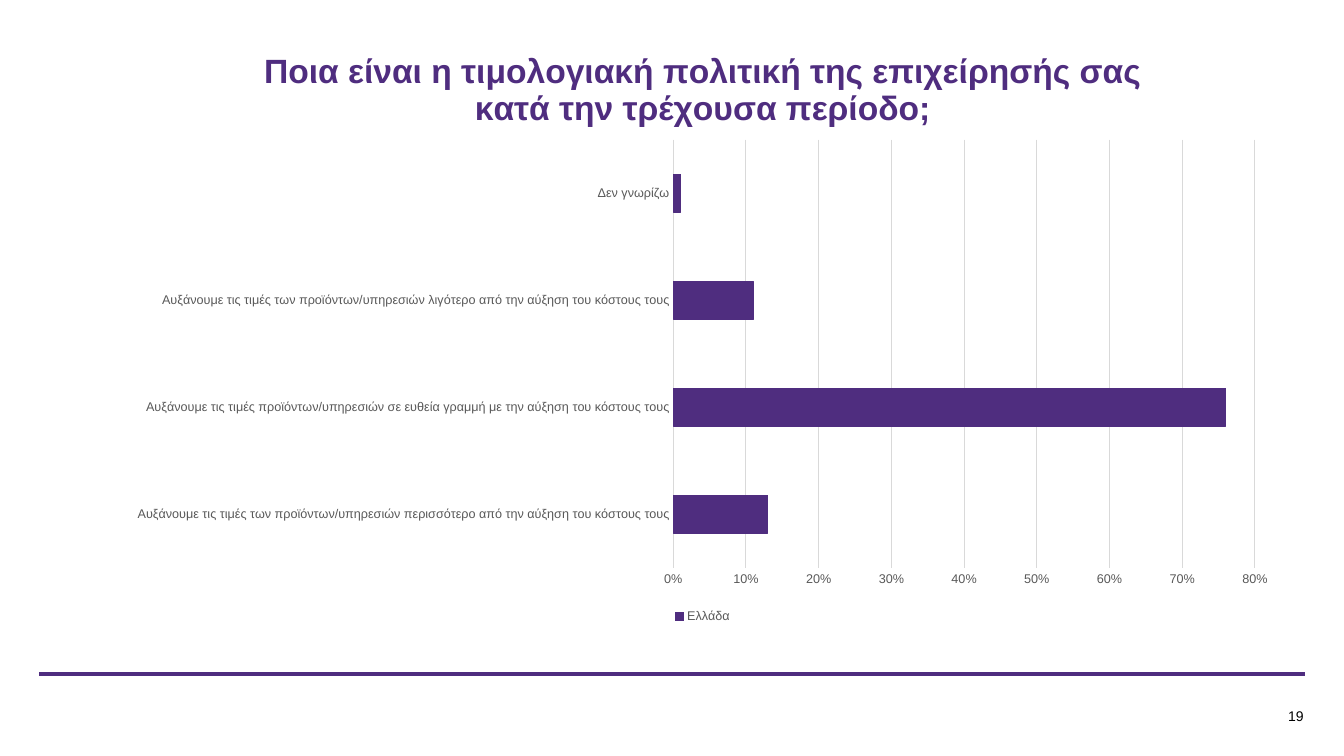
import pptx
import pptx.chart.data
import pptx.dml.color
import pptx.enum.chart
import pptx.enum.shapes
import pptx.enum.text
import pptx.oxml
import pptx.oxml.ns
import pptx.util
from pptx.util import Inches

COLORS = {"purple": "4F2D7F", "label": "595959", "grid": "D9D9D9", "black": "000000"}
FONT = "Arial"
TITLE = "Ποια είναι η τιμολογιακή πολιτική της επιχείρησής σας κατά την τρέχουσα περίοδο;"
ANSWERS = {
    "Αυξάνουμε τις τιμές των προϊόντων/υπηρεσιών περισσότερο από την αύξηση του κόστους τους": 0.13,
    "Αυξάνουμε τις τιμές προϊόντων/υπηρεσιών σε ευθεία γραμμή με την αύξηση του κόστους τους": 0.76,
    "Αυξάνουμε τις τιμές των προϊόντων/υπηρεσιών λιγότερο από την αύξηση του κόστους τους": 0.11,
    "Δεν γνωρίζω": 0.01,
}
PLOT_AREA = {"x": 0.475, "y": 0.19, "w": 0.494, "h": 0.71}


def rgb(name):
    return pptx.dml.color.RGBColor.from_string(COLORS[name])


def style_font(font, size, color, bold=False):
    font.name = FONT
    font.size = pptx.util.Pt(size)
    font.bold = bold
    font.color.rgb = rgb(color)


def style_line(line, color, width):
    line.color.rgb = rgb(color)
    line.width = pptx.util.Pt(width)


def add_rule(slide, left, right, y):
    rule = slide.shapes.add_connector(
        pptx.enum.shapes.MSO_CONNECTOR.STRAIGHT,
        Inches(left), Inches(y), Inches(right), Inches(y))
    style_line(rule.line, "purple", 3)
    rule._element.spPr.append(pptx.oxml.parse_xml(
        "<a:effectLst %s/>" % pptx.oxml.ns.nsdecls("a")))


def add_page_number(slide, number):
    box = slide.shapes.add_textbox(Inches(11.87), Inches(6.99), Inches(1.06), Inches(0.22))
    frame = box.text_frame
    frame.word_wrap = True
    frame.margin_left = frame.margin_right = frame.margin_top = frame.margin_bottom = 0
    frame.vertical_anchor = pptx.enum.text.MSO_ANCHOR.MIDDLE
    paragraph = frame.paragraphs[0]
    paragraph.alignment = pptx.enum.text.PP_ALIGN.RIGHT
    run = paragraph.add_run()
    run.text = number
    style_font(run.font, 10, "black")


def place_plot(chart):
    """Fix the inner plot area as fractions of the chart."""
    sizes = "".join('<c:%s val="%s"/>' % item for item in PLOT_AREA.items())
    layout = pptx.oxml.parse_xml(
        '<c:layout %s><c:manualLayout><c:layoutTarget val="inner"/>'
        '<c:xMode val="edge"/><c:yMode val="edge"/>%s</c:manualLayout></c:layout>'
        % (pptx.oxml.ns.nsdecls("c"), sizes))
    plot_area = chart._chartSpace.chart.plotArea
    for automatic in plot_area.findall(pptx.oxml.ns.qn("c:layout")):
        plot_area.remove(automatic)
    plot_area.insert(0, layout)


def style_axis(axis):
    axis.major_tick_mark = axis.minor_tick_mark = pptx.enum.chart.XL_TICK_MARK.NONE
    style_font(axis.tick_labels.font, 9, "label")


def add_answer_chart(slide):
    data = pptx.chart.data.CategoryChartData(number_format="###0%")
    data.categories = list(ANSWERS)
    data.add_series("Ελλάδα", list(ANSWERS.values()))
    chart = slide.shapes.add_chart(
        pptx.enum.chart.XL_CHART_TYPE.BAR_CLUSTERED,
        Inches(1.13), Inches(0.25), Inches(11.68), Inches(5.98), data).chart
    style_font(chart.font, 10, "black")

    # Title
    chart.has_title = True
    title_run = chart.chart_title.text_frame.paragraphs[0].add_run()
    title_run.text = TITLE
    style_font(title_run.font, 24, "purple", bold=True)
    chart.chart_title.include_in_layout = False

    # Bars
    plot = chart.plots[0]
    plot.gap_width = 182
    plot.vary_by_categories = False
    greece = plot.series[0]
    greece.format.fill.solid()
    greece.format.fill.fore_color.rgb = rgb("purple")
    style_line(greece.format.line, "purple", 0.75)

    # Axes
    answers, share = chart.category_axis, chart.value_axis
    style_axis(answers)
    style_line(answers.format.line, "grid", 0.75)
    style_axis(share)
    share.format.line.fill.background()
    share.minimum_scale, share.maximum_scale, share.major_unit = 0, 0.8, 0.1
    share.tick_labels.number_format = "###0%"
    share.tick_labels.number_format_is_linked = False
    share.has_major_gridlines = True
    style_line(share.major_gridlines.format.line, "grid", 0.75)

    # Legend
    chart.has_legend = True
    chart.legend.position = pptx.enum.chart.XL_LEGEND_POSITION.BOTTOM
    chart.legend.include_in_layout = False
    style_font(chart.legend.font, 9, "label")
    place_plot(chart)


def main():
    deck = pptx.Presentation()
    deck.slide_width, deck.slide_height = Inches(13.33), Inches(7.5)
    slide = deck.slides.add_slide(deck.slide_layouts[6])
    add_rule(slide, 0.39, 12.94, 6.69)
    add_page_number(slide, "19")
    add_answer_chart(slide)
    deck.save("out.pptx")


if __name__ == "__main__":
    main()
